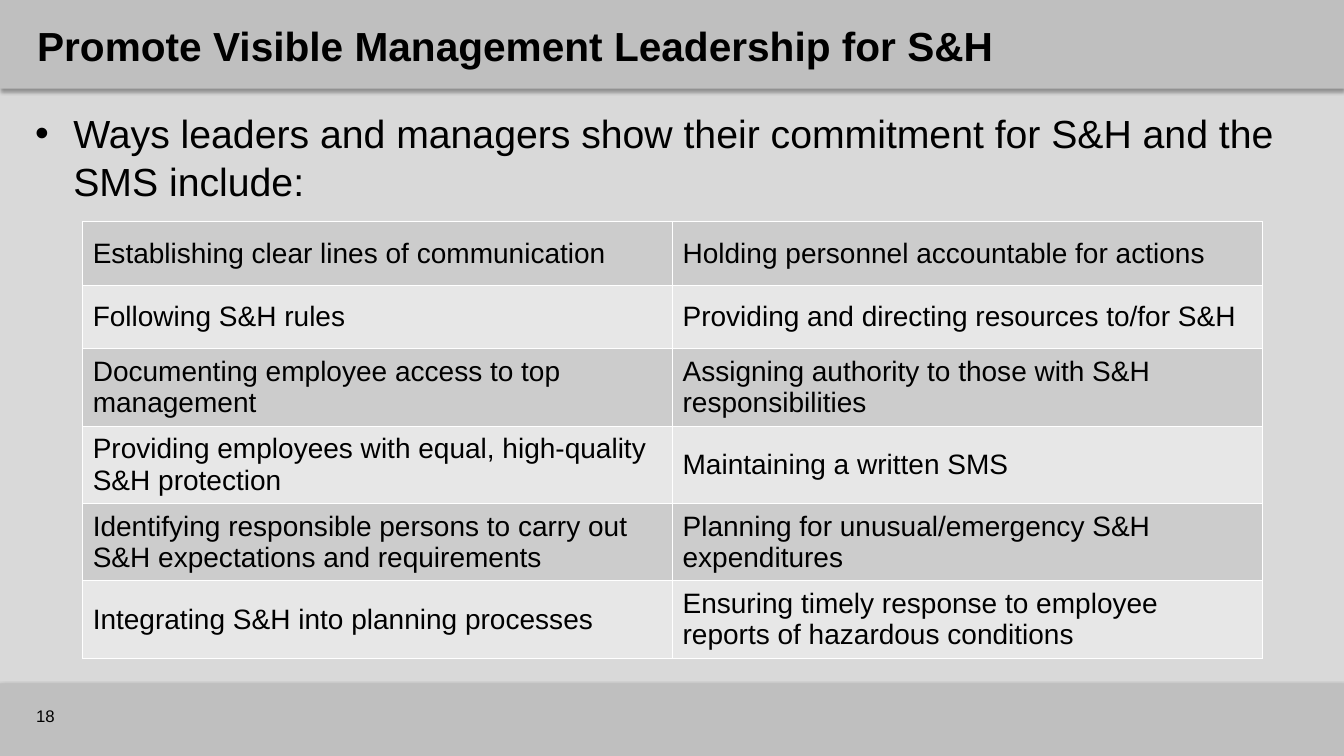
import pptx
import pptx.dml.color
import pptx.enum.shapes
import pptx.enum.text
import pptx.oxml.ns
import pptx.util
from lxml import etree
from pptx.util import Inches

COLORS = {
    "background": "D9D9D9",
    "band": "BFBFBF",
    "text": "000000",
    "dark_row": "CCCCCC",
    "light_row": "E7E7E7",
    "border": "FFFFFF",
}

COMMITMENTS = [
    ("Establishing clear lines of communication",
     "Holding personnel accountable for actions"),
    ("Following S&H rules",
     "Providing and directing resources to/for S&H"),
    ("Documenting employee access to top management",
     "Assigning authority to those with S&H responsibilities"),
    ("Providing employees with equal, high-quality S&H protection",
     "Maintaining a written SMS"),
    ("Identifying responsible persons to carry out S&H expectations and requirements",
     "Planning for unusual/emergency S&H expenditures"),
    ("Integrating S&H into planning processes",
     "Ensuring timely response to employee reports of hazardous conditions"),
]
ROW_HEIGHTS = [0.63, 0.63, 0.68, 0.68, 0.68, 0.63]


def color(name):
    return pptx.dml.color.RGBColor.from_string(COLORS[name])


def add_element(parent, tag, **attributes):
    element = etree.SubElement(parent, pptx.oxml.ns.qn(tag))
    for name, value in attributes.items():
        element.set(name, str(value))
    return element


class SlideBuilder:
    font = "Arial"

    def __init__(self, page):
        self.page = page
        page.background.fill.solid()
        page.background.fill.fore_color.rgb = color("background")

    def band(self, top, height):
        shape = self.page.shapes.add_shape(
            pptx.enum.shapes.MSO_SHAPE.RECTANGLE,
            Inches(0), Inches(top), Inches(13.33), Inches(height))
        shape.fill.solid()
        shape.fill.fore_color.rgb = color("band")
        shape.line.fill.background()
        shape.shadow.inherit = False
        effects = shape._element.spPr.find(pptx.oxml.ns.qn("a:effectLst"))
        shadow = add_element(effects, "a:outerShdw", blurRad=pptx.util.Pt(3.1),
                             dist=pptx.util.Pt(1.8), dir=90 * 60000, rotWithShape=0)
        shade = add_element(shadow, "a:srgbClr", val=COLORS["text"])
        add_element(shade, "a:alpha", val=35000)

    def span(self, para, text, size, bold=False):
        span = para.add_run()
        span.text = text
        span.font.name = self.font
        span.font.size = pptx.util.Pt(size)
        span.font.bold = bold
        span.font.color.rgb = color("text")

    def text(self, left, top, width, height, text, size, bold=False,
             anchor=pptx.enum.text.MSO_ANCHOR.MIDDLE):
        box = self.page.shapes.add_textbox(
            Inches(left), Inches(top), Inches(width), Inches(height))
        box.text_frame.word_wrap = True
        box.text_frame.vertical_anchor = anchor
        para = box.text_frame.paragraphs[0]
        self.span(para, text, size, bold)
        return para

    def bullet(self, left, top, width, height, text, size):
        para = self.text(left, top, width, height, text, size,
                         anchor=pptx.enum.text.MSO_ANCHOR.TOP)
        properties = para._p.get_or_add_pPr()
        properties.set("marL", str(Inches(0.38)))
        properties.set("indent", str(Inches(-0.38)))
        bullet_color = add_element(properties, "a:buClr")
        add_element(bullet_color, "a:srgbClr", val=COLORS["text"])
        add_element(properties, "a:buFont", typeface=self.font)
        add_element(properties, "a:buChar", char="•")
        para.space_after = pptx.util.Pt(6)

    def border(self, cell):
        properties = cell._tc.get_or_add_tcPr()
        for side in ("a:lnL", "a:lnR", "a:lnT", "a:lnB"):
            line = add_element(properties, side, w=pptx.util.Pt(1))
            fill = add_element(line, "a:solidFill")
            add_element(fill, "a:srgbClr", val=COLORS["border"])

    def table(self, left, top, width, rows, heights, size):
        table = self.page.shapes.add_table(
            len(rows), len(rows[0]), Inches(left), Inches(top),
            Inches(width), Inches(sum(heights))).table
        table.first_row = False
        table.horz_banding = False
        for index, (texts, height) in enumerate(zip(rows, heights)):
            table.rows[index].height = Inches(height)
            for column, text in enumerate(texts):
                cell = table.cell(index, column)
                self.border(cell)
                cell.fill.solid()
                cell.fill.fore_color.rgb = color("light_row" if index % 2 else "dark_row")
                cell.vertical_anchor = pptx.enum.text.MSO_ANCHOR.MIDDLE
                self.span(cell.text_frame.paragraphs[0], text, size)


def main():
    deck = pptx.Presentation()
    deck.slide_width = Inches(13.33)
    deck.slide_height = Inches(7.5)
    builder = SlideBuilder(deck.slides.add_slide(deck.slide_layouts[6]))
    builder.band(6.78, 0.72)
    builder.band(0, 0.88)
    builder.text(0.27, 0.14, 12.93, 0.62,
                 "Promote Visible Management Leadership for S&H", 29, bold=True)
    builder.bullet(0.25, 1.04, 12.94, 5.5,
                   "Ways leaders and managers show their commitment for S&H and the SMS include:", 28)
    builder.text(0.26, 6.9, 1, 0.4, "18", 12)
    builder.table(0.82, 2.2, 11.7, COMMITMENTS, ROW_HEIGHTS, 20)
    deck.save("out.pptx")


if __name__ == "__main__":
    main()
